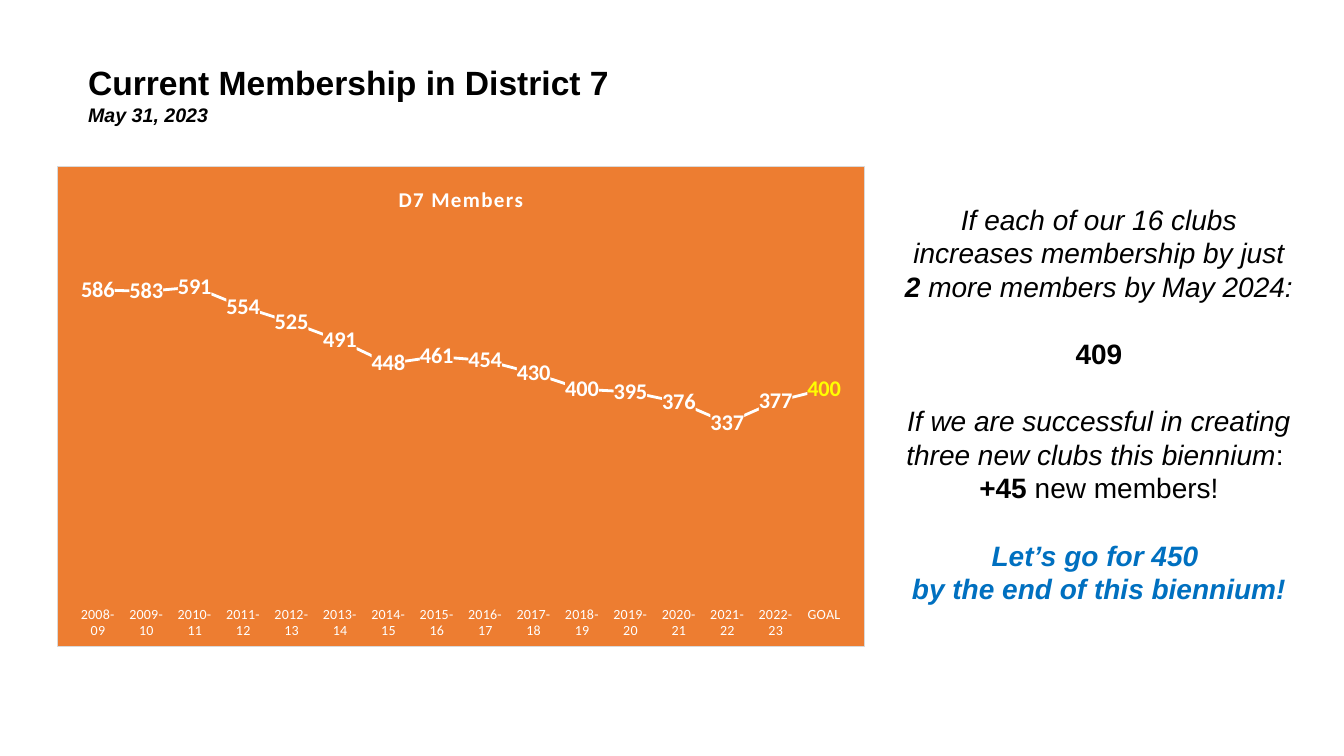
"""Build the District 7 membership slide."""
from lxml.etree import fromstring
from pptx import Presentation
from pptx.chart.data import CategoryChartData
from pptx.dml.color import RGBColor
from pptx.enum.chart import XL_CHART_TYPE, XL_LABEL_POSITION, XL_MARKER_STYLE, XL_TICK_MARK
from pptx.enum.text import MSO_ANCHOR, MSO_AUTO_SIZE, PP_ALIGN
from pptx.oxml.ns import nsdecls
from pptx.util import Emu, Pt

PX = 914400 / 100.8
BLACK = RGBColor(0, 0, 0)
WHITE = RGBColor(255, 255, 255)
BLUE = RGBColor(0x00, 0x70, 0xC0)
YELLOW = RGBColor(255, 255, 0)
ORANGE = RGBColor(0xED, 0x7D, 0x31)
GRAY = RGBColor(0xD9, 0xD9, 0xD9)


def place(shape, *box):
    """Move a placeholder to a box in px and prepare its frame."""
    shape.left, shape.top, shape.width, shape.height = [Emu(round(n * PX)) for n in box]
    frame = shape.text_frame
    frame.word_wrap = True
    frame.auto_size = MSO_AUTO_SIZE.SHAPE_TO_FIT_TEXT
    frame.vertical_anchor = MSO_ANCHOR.TOP
    return frame


def write(frame, first, runs, size, color, align, gap=0):
    """Add one paragraph of (text, bold, italic) runs."""
    para = frame.paragraphs[0] if first else frame.add_paragraph()
    para.alignment = align
    para.line_spacing = Pt(round(size * 1.2))
    para.space_before, para.space_after = Pt(gap), Pt(0)
    para.font.name, para.font.size = "Arial", Pt(size)
    para.font.color.rgb = color
    for text, bold, slant in runs:
        run = para.add_run()
        run.text = text
        run.font.bold, run.font.italic = bold, slant
    return para


deck = Presentation()
deck.slide_width, deck.slide_height = Emu(round(1344 * PX)), Emu(round(756 * PX))
slide = deck.slides.add_slide(deck.slide_layouts[1])

head = place(slide.shapes.title, 78, 57, 564, 75)
write(head, True, [("Current Membership in District 7", True, False)], 24, BLACK, PP_ALIGN.LEFT)
write(head, False, [("May 31, 2023", True, True)], 14, BLACK, PP_ALIGN.LEFT)

GOALS = [
    (0, BLACK, [("If each of our 16 clubs increases membership by just ", False, True),
                ("2 ", True, True), ("more members by May 2024:", False, True)]),
    (24, BLACK, [("409", True, False)]),
    (24, BLACK, [("If we are successful in creating three new clubs this biennium", False, True),
                 (": ", False, False)]),
    (0, BLACK, [("+45 ", True, False), ("new members!", False, False)]),
    (24, BLUE, [("Let’s go for 450 ", True, True)]),
    (0, BLUE, [("by the end of this biennium!", True, True)]),
]
body = place(slide.placeholders[1], 892, 197, 414, 417)
for i, (gap, color, runs) in enumerate(GOALS):
    para = write(body, i == 0, runs, 20, color, PP_ALIGN.CENTER, gap)
    props = para._p.get_or_add_pPr()
    props.set("marL", "0")
    props.set("indent", "0")
    props.find("{*}defRPr").addprevious(fromstring(f"<a:buNone {nsdecls('a')}/>"))

data = CategoryChartData()
data.categories = [f"{y}-{y % 100 + 1:02}" for y in range(2008, 2023)] + ["GOAL"]
data.add_series("D7 Members", [586, 583, 591, 554, 525, 491, 448, 461,
                               454, 430, 400, 395, 376, 337, 377, 400])
box = [Emu(round(n * PX)) for n in (57, 166, 808, 481)]
chart = slide.shapes.add_chart(XL_CHART_TYPE.LINE, *box, data).chart
chart.font.name, chart.font.size = "Calibri", Pt(10)
chart.font.color.rgb = BLACK
chart.has_legend = False

chart.has_title = True
name = chart.chart_title.text_frame.paragraphs[0].add_run()
name.text = "D7 Members"
name.font.name, name.font.size, name.font.bold = "Calibri", Pt(15), True
name.font.color.rgb = WHITE
name._r.get_or_add_rPr().set("spc", "100")
chart.chart_title.include_in_layout = False

years = chart.category_axis
years.major_tick_mark = XL_TICK_MARK.NONE
years.format.line.fill.background()
years.tick_labels.font.name, years.tick_labels.font.size = "Calibri", Pt(10)
years.tick_labels.font.color.rgb = WHITE
style = years._element.find("{*}txPr")
style.find("{*}bodyPr").set("rot", "0")
style.find(".//{*}defRPr").set("spc", "30")
count = chart.value_axis
count.minimum_scale, count.maximum_scale = 0, 700
count.has_major_gridlines = False
count.visible = False

line = chart.plots[0].series[0]
line.smooth = False
line.marker.style = XL_MARKER_STYLE.NONE
line.format.line.color.rgb = WHITE
line.format.line.width = Pt(2)
chart.plots[0].vary_by_categories = False

labels = line.data_labels
labels.show_value = True
goal = line.points[15].data_label
for label, color in ((labels, WHITE), (goal, YELLOW)):
    label.font.name, label.font.size, label.font.bold = "Calibri", Pt(16), True
    label.font.color.rgb = color
    label.position = XL_LABEL_POSITION.CENTER

FILL = f"<a:solidFill><a:srgbClr val='{ORANGE}'/></a:solidFill>"
EDGE = f"<a:ln w='9525'><a:solidFill><a:srgbClr val='{GRAY}'/></a:solidFill></a:ln>"
root = chart._chartSpace
texts = [(root.find("{*}txPr"), EDGE)]
texts += [(root.find(f".//{{*}}ser/{{*}}dLbls/{tag}{{*}}txPr"), "") for tag in ("", "{*}dLbl/")]
for text, edge in texts:
    text.addprevious(fromstring(f"<c:spPr {nsdecls('c', 'a')}>{FILL}{edge}</c:spPr>"))

area = root.find(".//{*}plotArea")
for old in area.findall("{*}layout"):
    area.remove(old)
PLOT = {"layoutTarget": "inner", "xMode": "edge", "yMode": "edge",
        "x": 0.02, "y": 0.13, "w": 0.96, "h": 0.78}
parts = "".join(f"<c:{key} val='{val}'/>" for key, val in PLOT.items())
area.insert(0, fromstring(
    f"<c:layout {nsdecls('c')}><c:manualLayout>{parts}</c:manualLayout></c:layout>"))

deck.save("out.pptx")
